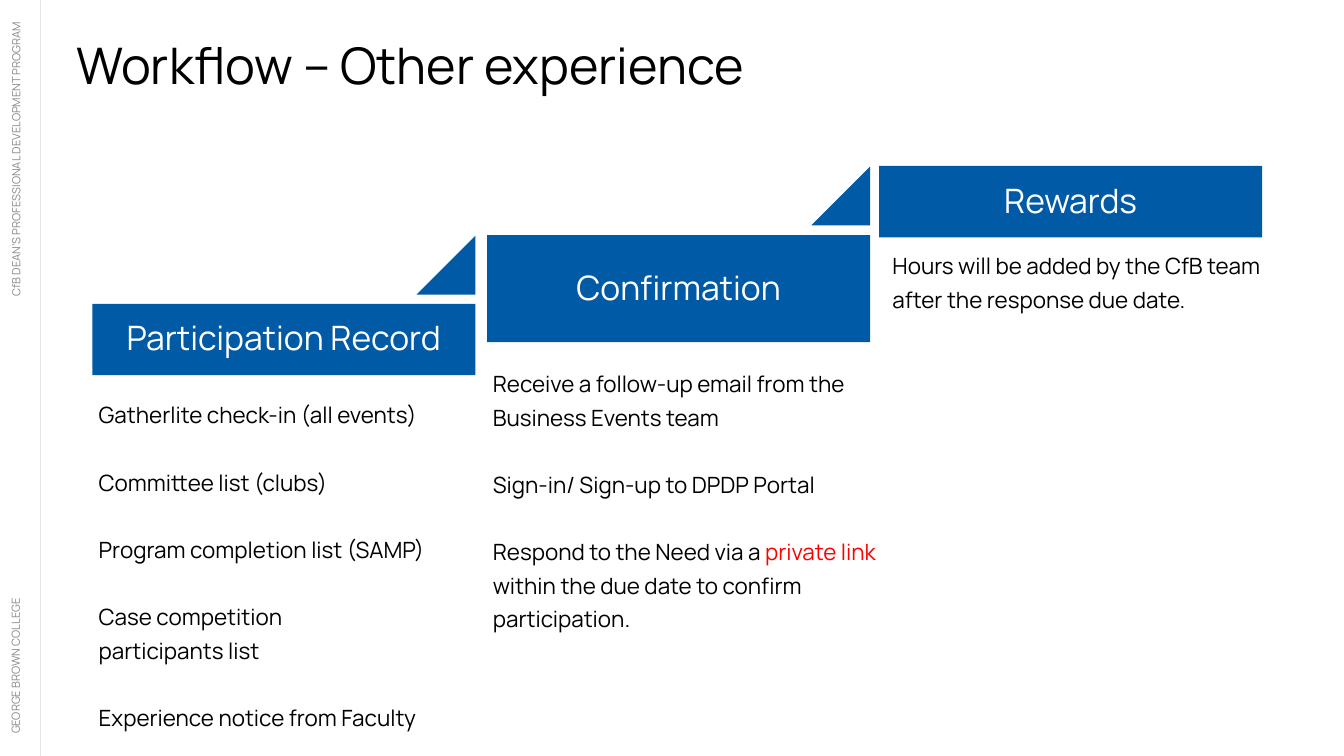
import pptx
import pptx.dml.color
import pptx.enum.shapes
import pptx.enum.text
import pptx.oxml
import pptx.oxml.ns
import pptx.util

PX = 9525  # EMU in one px, 96 px to the inch
FONT = "Manrope"
BLUE, BLACK, WHITE, RED = "005AA5", "000000", "FFFFFF", "FF0000"
GREY, PALE = "898989", "E7E6E6"
CARD_W, TRIANGLE = 547, 84
ALIGN = pptx.enum.text.PP_ALIGN

TITLE = {"size": 54, "leading": 58.3}
HEADING = {"size": 36, "leading": 38.9, "color": WHITE, "align": ALIGN.CENTER}
BODY = {"size": 24, "leading": 36, "gap": 36}
MARGIN = {"size": 12, "leading": 14.4, "color": GREY}

# heading, card left, top and height, body left, top and width, paragraphs
STEPS = [
    ("Participation Record", (132, 434, 102), (141, 564, 531), [
        "Gatherlite check-in (all events)",
        "Committee list (clubs)",
        "Program completion list (SAMP)",
        "Case competition\nparticipants list",
        "Experience notice from Faculty",
    ]),
    ("Confirmation", (696, 336, 153), (704, 519, 552), [
        "Receive a follow-up email from the Business Events team",
        "Sign-in/ Sign-up to DPDP Portal",
        [("Respond to the Need via a ", BLACK), ("private link", RED),
         (" within the due date to confirm participation.", BLACK)],
    ]),
    ("Rewards", (1256, 237, 102), (1275, 351, 531), [
        "Hours will be added by the CfB team after the response due date.",
    ]),
]


def px(n):
    return pptx.util.Emu(n * PX)


def rgb(value):
    return pptx.dml.color.RGBColor.from_string(value)


def set_attrs(obj, values):
    for name, value in values.items():
        setattr(obj, name, value)


def write(tf, paragraphs, style, inset=0, anchor=pptx.enum.text.MSO_ANCHOR.TOP):
    """Fill a frame; a paragraph is a string or a list of (text, colour) runs."""
    set_attrs(tf, {"word_wrap": True, "vertical_anchor": anchor,
                   "margin_left": px(inset), "margin_right": px(inset),
                   "margin_top": px(inset), "margin_bottom": px(inset)})
    for i, runs in enumerate(paragraphs):
        p = tf.add_paragraph() if i else tf.paragraphs[0]
        set_attrs(p, {"alignment": style.get("align", ALIGN.LEFT),
                      "line_spacing": pptx.util.Pt(style["leading"]),
                      "space_before": pptx.util.Pt(style.get("gap", 0) if i else 0)})
        if isinstance(runs, str):
            runs = [(runs, style.get("color", BLACK))]
        for text, color in runs:
            for j, line in enumerate(text.split("\n")):
                if j:
                    p.add_line_break()
                r = p.add_run()
                r.text = line
                set_attrs(r.font, {"name": FONT, "size": pptx.util.Pt(style["size"])})
                r.font.color.rgb = rgb(color)


def add_text(s, box, paragraphs, style, rotation=0):
    sp = s.shapes.add_textbox(*map(px, box))
    sp.rotation = rotation
    write(sp.text_frame, paragraphs, style)


def paint(sp):
    sp.shadow.inherit = False
    sp.fill.solid()
    sp.fill.fore_color.rgb = rgb(BLUE)
    sp.line.fill.background()


def add_card(s, heading, left, top, height):
    sp = s.shapes.add_shape(pptx.enum.shapes.MSO_SHAPE.RECTANGLE,
                            *map(px, (left, top, CARD_W, height)))
    paint(sp)
    write(sp.text_frame, [heading], HEADING, 6, pptx.enum.text.MSO_ANCHOR.MIDDLE)


def add_triangle(s, right, top):
    """Right triangle with its square corner at the bottom right."""
    bottom = top + TRIANGLE
    builder = s.shapes.build_freeform(right - TRIANGLE, bottom, scale=PX)
    builder.add_line_segments([(right, top), (right, bottom)], close=True)
    paint(builder.convert_to_shape())


def add_rule(s, x, height):
    line = s.shapes.add_connector(pptx.enum.shapes.MSO_CONNECTOR.STRAIGHT,
                                  px(x), px(0), px(x), px(height))
    line.line.color.rgb = rgb(PALE)
    line.line.width = pptx.util.Pt(0.75)
    line._element.spPr.append(pptx.oxml.parse_xml(
        f'<a:effectLst {pptx.oxml.ns.nsdecls("a")}/>'))


def main():
    prs = pptx.Presentation()
    set_attrs(prs, {"slide_width": px(1920), "slide_height": px(1080)})
    s = prs.slides.add_slide(prs.slide_layouts[6])

    add_text(s, (-198, 807, 452, 31), ["GEORGE BROWN COLLEGE"], MARGIN, 270)
    add_rule(s, 57, 1080)
    add_text(s, (-203, 247, 452, 20), ["CfB DEAN’S PROFESSIONAL DEVELOPMENT PROGRAM"],
             {**MARGIN, "align": ALIGN.RIGHT}, 270)
    add_text(s, (110, 58, 1747, 79), ["Workflow – Other experience"], TITLE)

    for i, (heading, card, (left, top, width), paragraphs) in enumerate(STEPS):
        add_card(s, heading, *card)
        if i + 1 < len(STEPS):
            next_top = STEPS[i + 1][1][1]
            add_triangle(s, card[0] + CARD_W, next_top + 1)
        lines = 2 * len(paragraphs)
        add_text(s, (left, top, width, 48 * lines), paragraphs, BODY)

    prs.save("out.pptx")


if __name__ == "__main__":
    main()
